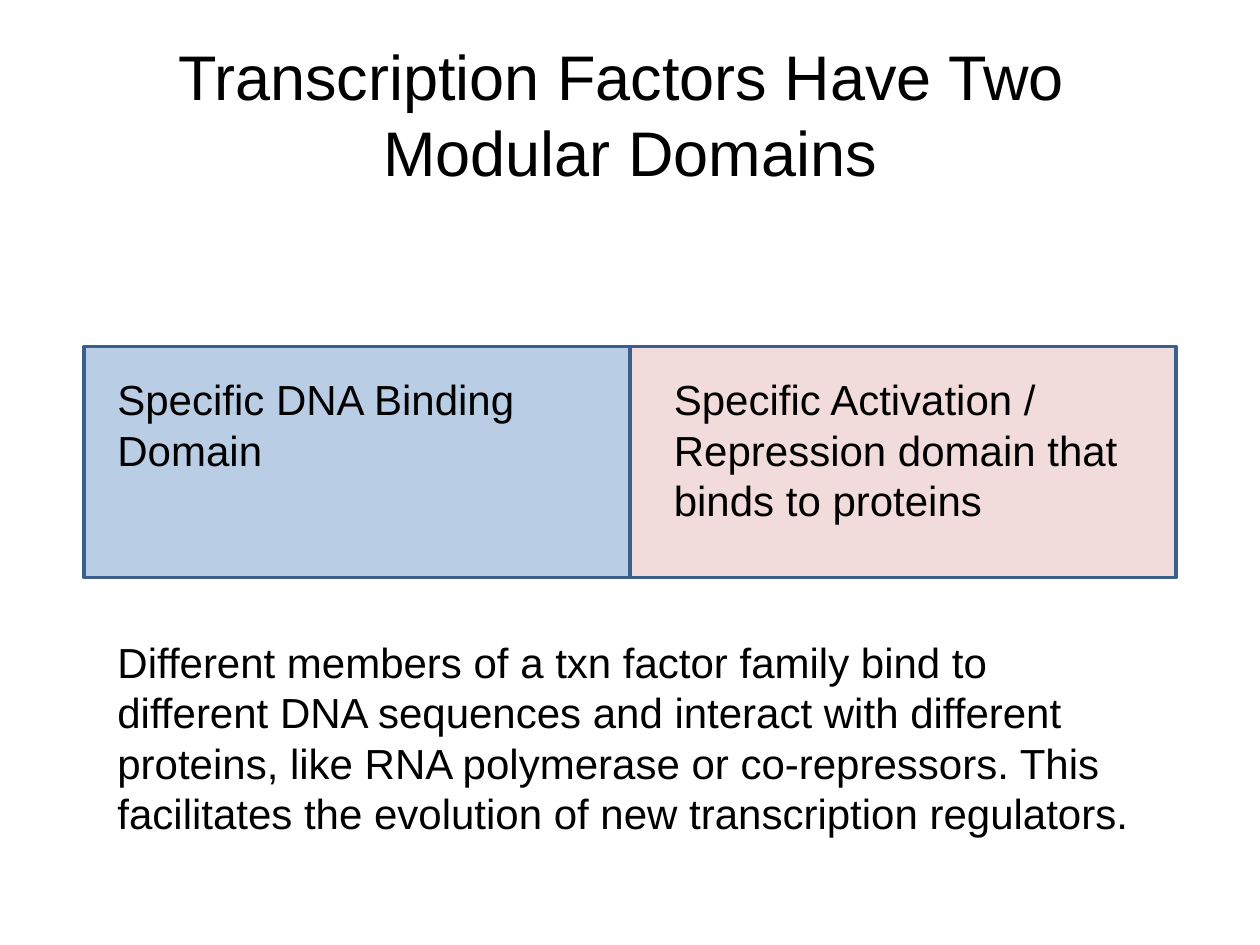
from dataclasses import dataclass

from pptx import Presentation
from pptx.dml.color import RGBColor as Rgb
from pptx.enum.shapes import MSO_SHAPE as Kind
from pptx.enum.text import MSO_AUTO_SIZE as Fit, PP_ALIGN as Align
from pptx.util import Pt

HUES = {"ink": "000000", "edge": "3A5F8C", "blue": "B9CDE5", "pink": "F2DCDB"}


@dataclass
class Box:
    left: float
    top: float
    wide: float
    high: float


@dataclass
class Part:
    box: Box
    hue: str


@dataclass
class Note:
    box: Box
    lines: list[str]
    size: int = 24
    align: Align = Align.LEFT


def hue(name: str) -> Rgb:
    return Rgb.from_string(HUES[name])


def place(box: Box) -> list[Pt]:
    return [Pt(n) for n in (box.left, box.top, box.wide, box.high)]


def draw_part(slide, part: Part) -> None:
    rect = slide.shapes.add_shape(Kind.RECTANGLE, *place(part.box))
    rect.shadow.inherit = False
    rect.fill.solid()
    rect.fill.fore_color.rgb = hue(part.hue)
    rect.line.color.rgb = hue("edge")
    rect.line.width = Pt(2)


def draw_note(slide, note: Note) -> None:
    frame = slide.shapes.add_textbox(*place(note.box)).text_frame
    frame.word_wrap = True
    frame.auto_size = Fit.SHAPE_TO_FIT_TEXT
    style = {"name": "Arial", "size": Pt(note.size)}
    for i, line in enumerate(note.lines):
        para = frame.add_paragraph() if i else frame.paragraphs[0]
        para.alignment = note.align
        run = para.add_run()
        run.text = line
        for key, value in style.items():
            setattr(run.font, key, value)
        run.font.color.rgb = hue("ink")


# Two equal domains, side by side about the middle of the slide
MID, TOP, WIDE, HIGH = 360, 198, 312, 132
PARTS = [
    Part(Box(MID - WIDE, TOP, WIDE, HIGH), "blue"),
    Part(Box(MID, TOP, WIDE, HIGH), "pink"),
]

# Title, domain labels and closing text
NOTES = [
    Note(Box(18, 18, 684, 94.5),
         ["Transcription Factors Have Two ", "Modular Domains"],
         36, Align.CENTER),
    Note(Box(60, TOP + 12, 282, 65.5), ["Specific DNA Binding", "Domain"]),
    Note(Box(378, TOP + 12, 282, 94.5),
         ["Specific Activation / Repression domain that binds to proteins"]),
    Note(Box(60, 360, 600, 123.5),
         ["Different members of a txn factor family bind to different DNA "
          "sequences and interact with different proteins, like RNA "
          "polymerase or co-repressors. This facilitates the evolution of "
          "new transcription regulators."]),
]


def main() -> None:
    deck = Presentation()
    deck.slide_width, deck.slide_height = Pt(720), Pt(540)
    slide = deck.slides.add_slide(deck.slide_layouts[6])
    for part in PARTS:
        draw_part(slide, part)
    for note in NOTES:
        draw_note(slide, note)
    deck.save("out.pptx")


if __name__ == "__main__":
    main()
